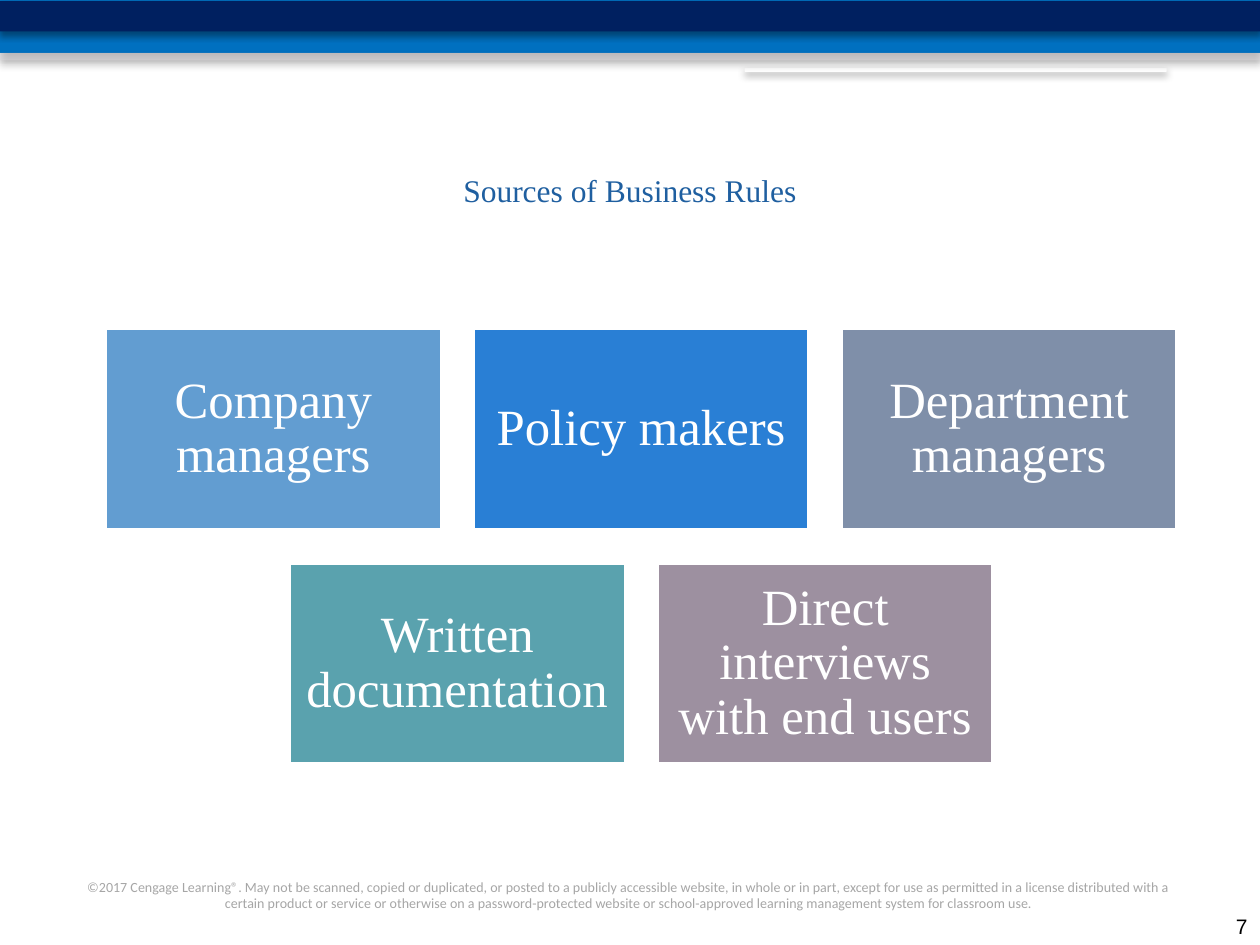
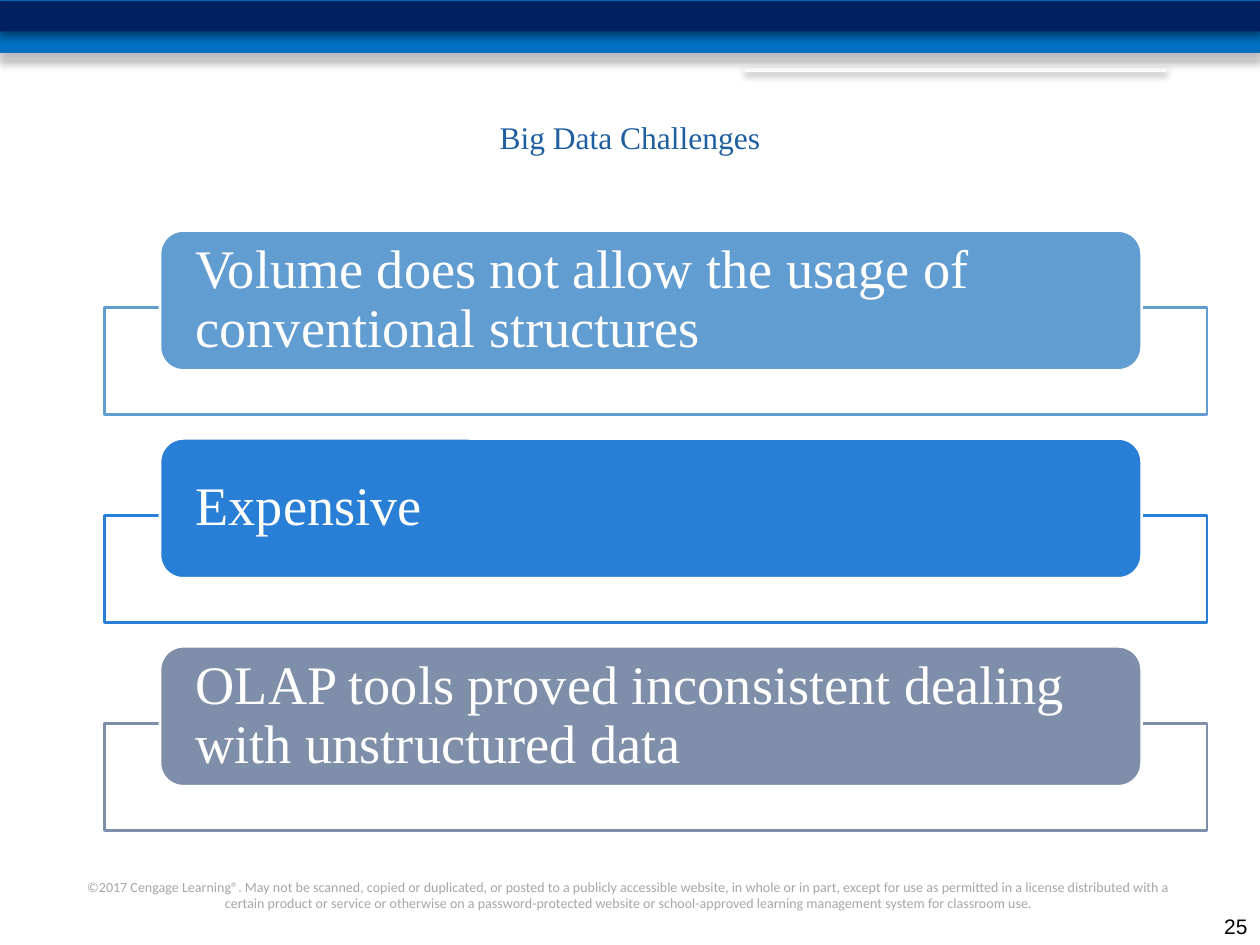
from lxml.etree import SubElement as Sub
from pptx import Presentation
from pptx.dml.color import RGBColor as Rgb
from pptx.enum.shapes import MSO_SHAPE as Kind
from pptx.enum.text import MSO_ANCHOR as Anchor, PP_ALIGN as Align
from pptx.oxml.ns import qn
from pptx.util import Inches, Pt

HUES = {
    "white": "FFFFFF", "black": "000000", "navy": "002060", "band": "0070C0",
    "haze": "D8D3D9", "title": "1F5FA0", "note": "A6A6A6", "sky": "629DD1",
    "blue": "297FD5", "slate": "7F8FA9", "teal": "5AA2AE", "mauve": "9D90A0",
}
SERIF = "Times New Roman"
NOTICE = (
    "©2017 Cengage Learning®. May not be scanned, copied or duplicated, or posted to a "
    "publicly accessible website, in whole or in part, except for use as permitted in a "
    "license distributed with a certain product or service or otherwise on a "
    "password-protected website or school-approved learning management system for "
    "classroom use."
)


class Deck:
    """Holds the shared style and the current slide."""

    def __init__(self):
        self.show = Presentation()
        self.show.slide_width = Inches(10)
        self.show.slide_height = Inches(7.5)

    def page(self, title, top, number):
        self.slide = self.show.slides.add_slide(self.show.slide_layouts[6])
        self.shape((5.91, 0.54, 3.35, 0.03), "white", kind=Kind.ROUNDED_RECTANGLE, shade=True)
        self.shape((0, 0, 10, 0.42), "band", shade=True)
        self.shape((0, 0.01, 10, 0.24), "navy", shade=True)
        self.shape((0, 0.42, 10, 0.06), "haze", alpha=50, shade=True)
        self.label((0.58, 6.92, 8.83, 0.36), NOTICE, 8, "note", "Calibri", anchor=Anchor.TOP)
        self.label((0.5, top, 9, 1.17), title, 18, "title")
        self.label((9.5, 7.17, 0.5, 0.33), str(number), 12, "black", "Arial",
                   Align.RIGHT, Anchor.BOTTOM)

    def shape(self, box, fill, line=None, kind=Kind.RECTANGLE, alpha=None, shade=False):
        item = self.slide.shapes.add_shape(kind, *map(Inches, box))
        item.fill.solid()
        item.fill.fore_color.rgb = Rgb.from_string(HUES[fill])
        props = item.element.spPr
        if alpha:
            tint = props.find(qn("a:solidFill")).find(qn("a:srgbClr"))
            Sub(tint, qn("a:alpha"), val=str(alpha * 1000))
        if line:
            item.line.color.rgb = Rgb.from_string(HUES[line])
            item.line.width = Pt(1.5)
        else:
            item.line.fill.background()
        item.shadow.inherit = False
        if shade:
            cast = Sub(props.find(qn("a:effectLst")), qn("a:outerShdw"), blurRad=str(Pt(4.1)),
                       dist=str(Pt(2)), dir="5400000", rotWithShape="0")
            tint = Sub(cast, qn("a:srgbClr"), val=HUES["black"])
            Sub(tint, qn("a:alpha"), val="40000")
        return item

    def label(self, box, text, size, hue, font=SERIF, align=Align.CENTER, anchor=Anchor.MIDDLE):
        item = self.slide.shapes.add_textbox(*map(Inches, box))
        self.letter(item, text, size, hue, font, align, anchor)

    def letter(self, item, text, size, hue="white", font=SERIF, align=Align.CENTER,
               anchor=Anchor.MIDDLE, pad=(0.1, 0.05), space=None):
        frame = item.text_frame
        frame.word_wrap = True
        frame.vertical_anchor = anchor
        frame.margin_left = frame.margin_right = Inches(pad[0])
        frame.margin_top = frame.margin_bottom = Inches(pad[1])
        para = frame.paragraphs[0]
        para.alignment = align
        para.line_spacing = space
        run = para.add_run()
        run.text = text
        run.font.size = Pt(size)
        run.font.name = font
        run.font.color.rgb = Rgb.from_string(HUES[hue])

    def tile(self, left, top, text, hue):
        item = self.shape((left, top, 2.66, 1.59), hue, "white")
        self.letter(item, text, 29, pad=(0.12, 0.12), space=0.9)

    def point(self, top, text, hue):
        self.shape((0.83, top + 0.61, 8.75, 0.85), "white", hue, alpha=90)
        item = self.shape((1.27, top, 7.79, 1.11), hue, "white", Kind.ROUNDED_RECTANGLE)
        self.letter(item, text, 31, align=Align.LEFT, pad=(0.23, 0), space=0.9)


def main():
    deck = Deck()

    deck.page("Sources of Business Rules", 0.92, 7)
    rows = [
        [("Company managers", "sky"), ("Policy makers", "blue"), ("Department managers", "slate")],
        [("Written documentation", "teal"), ("Direct interviews with end users", "mauve")],
    ]
    step = 2.92
    for row, tiles in enumerate(rows):
        left = 0.84 + (3 - len(tiles)) * step / 2
        for col, (text, hue) in enumerate(tiles):
            deck.tile(left + col * step, 2.61 + row * 1.86, text, hue)

    deck.page("Big Data Challenges", 0.5, 25)
    points = [
        ("Volume does not allow the usage of conventional structures", "sky"),
        ("Expensive", "blue"),
        ("OLAP tools proved inconsistent dealing with unstructured data", "slate"),
    ]
    for row, (text, hue) in enumerate(points):
        deck.point(1.83 + row * 1.65, text, hue)

    deck.show.save("out.pptx")


if __name__ == "__main__":
    main()
